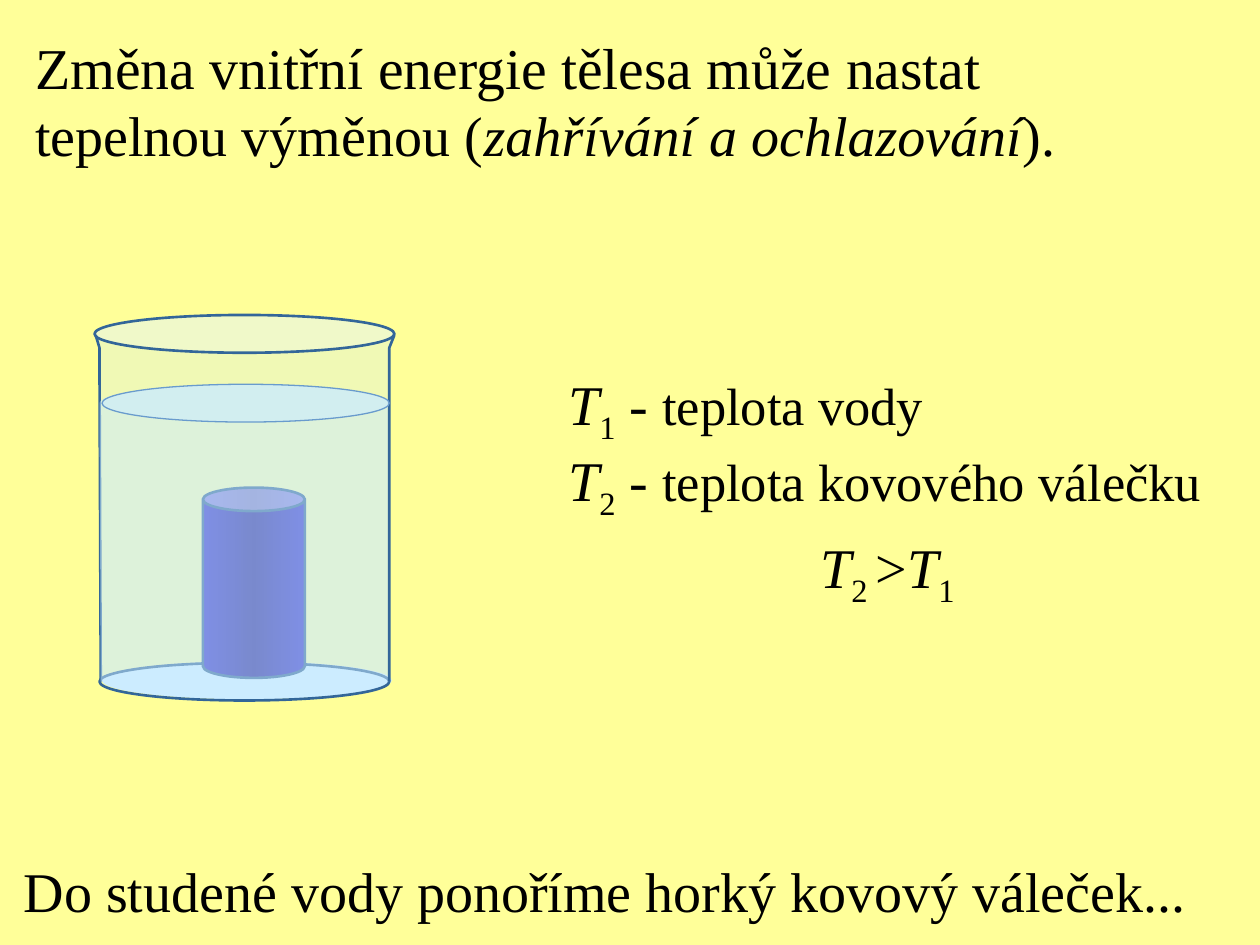
"""Builds a slide on heat exchange between water and a hot metal cylinder."""
from copy import deepcopy
from math import cos, pi, sin

from pptx import Presentation
from pptx.dml.color import RGBColor
from pptx.enum.shapes import MSO_SHAPE
from pptx.enum.text import MSO_ANCHOR, PP_ALIGN
from pptx.oxml.ns import qn
from pptx.oxml.xmlchemy import OxmlElement
from pptx.util import Inches, Pt

BACKGROUND = RGBColor(0xFF, 0xFF, 0x99)
BLACK = RGBColor(0, 0, 0)
WATER = RGBColor(0xCC, 0xEC, 0xFF)
RIM = RGBColor(0xF3, 0xFA, 0xFF)
OUTLINE = RGBColor(0x33, 0x66, 0x99)
SURFACE_LINE = RGBColor(0x69, 0x9B, 0xCD)
METAL = RGBColor(0x33, 0x33, 0xCC)
METAL_DARK = RGBColor(0x27, 0x27, 0x9C)
FONT = "Times New Roman"


def write_runs(paragraph, runs):
    paragraph.alignment = PP_ALIGN.LEFT
    for text, size, style in runs:
        run = paragraph.add_run()
        run.text = text
        run.font.name = FONT
        run.font.size = Pt(size)
        run.font.color.rgb = BLACK
        run.font.italic = style == "italic"
        if style == "sub":
            run.font._element.set("baseline", "-25000")


def upper_arc(center_x, center_y, radius_x, radius_y):
    angles = [pi * step / 24 for step in range(25)]
    return [(center_x - radius_x * cos(a), center_y - radius_y * sin(a)) for a in angles]


prs = Presentation()
prs.slide_width, prs.slide_height = Inches(10), Inches(7.5)
slide = prs.slides.add_slide(prs.slide_layouts[5])
slide.background.fill.solid()
slide.background.fill.fore_color.rgb = BACKGROUND

caption = slide.shapes.add_textbox(Inches(0.09), Inches(6.75), Inches(9.63), Inches(0.64)).text_frame
caption.word_wrap = True
write_runs(caption.paragraphs[0], [("Do studené vody ponoříme horký kovový váleček...", 32, "")])

legend = slide.shapes.add_textbox(Inches(4.51), Inches(2.88), Inches(5.3), Inches(1.82)).text_frame
legend.word_wrap = True
legend.margin_left = legend.margin_right = 0
legend_lines = [
    [("T", 32, "italic"), ("1", 32, "sub"), (" - ", 32, ""), ("teplota vody", 30, "")],
    [("T", 32, "italic"), ("2", 32, "sub"), (" - ", 32, ""), ("teplota kovového válečku", 30, "")],
    [("T", 32, "italic"), ("2 ", 32, "sub"), (">", 32, ""), ("T", 32, "italic"), ("1", 32, "sub")],
]
for index, runs in enumerate(legend_lines):
    line = legend.add_paragraph() if index else legend.paragraphs[0]
    write_runs(line, runs)
legend.paragraphs[1].space_after = Pt(6)
legend.paragraphs[2]._p.get_or_add_pPr().set("marL", str(Inches(2)))

title = slide.shapes.title
title.left, title.top, title.width, title.height = Inches(0.2), Inches(0.2), Inches(8.64), Inches(1.19)
heading = title.text_frame
heading.word_wrap = True
heading.vertical_anchor = MSO_ANCHOR.TOP
heading.margin_left = heading.margin_right = Inches(0.08)
write_runs(heading.paragraphs[0], [
    ("Změna vnitřní energie tělesa může nastat", 33, ""),
    (" tepelnou výměnou (", 32, ""),
    ("zahřívání a ochlazování", 32, "italic"),
    (").", 32, ""),
])

glass = upper_arc(1.94, 2.66, 1.19, 0.15) + [
    (3.09, 2.76), (3.09, 5.39), (0.79, 5.39), (0.79, 2.76)]
water = upper_arc(1.94, 3.2, 1.15, 0.15) + [(3.09, 5.41), (0.8, 5.41)]
left_wall = [(0.76, 2.66), (0.79, 2.76), (0.79, 2.85), (0.8, 5.41)]
right_wall = [(3.13, 2.66), (3.09, 2.76), (3.09, 5.41)]

beaker_parts = [
    (None, glass, WATER, 28, None, 0),
    (MSO_SHAPE.OVAL, (0.75, 2.5, 2.38, 0.3), RIM, 28, OUTLINE, 1.5),
    (MSO_SHAPE.OVAL, (0.81, 5.25, 2.3, 0.3), WATER, 100, None, 0),
    (MSO_SHAPE.OVAL, (0.79, 5.26, 2.3, 0.3), WATER, 15, OUTLINE, 1.5),
    (None, left_wall, None, 0, OUTLINE, 1.5),
    (MSO_SHAPE.CAN, (1.61, 3.87, 0.81, 1.51), METAL, 100, OUTLINE, 1.5),
    (None, water, WATER, 50, None, 0),
    (None, right_wall, None, 0, OUTLINE, 1.5),
    (MSO_SHAPE.OVAL, (0.81, 3.05, 2.28, 0.3), WATER, 60, SURFACE_LINE, 0.75),
]
for preset, geometry, color, opacity, edge, edge_width in beaker_parts:
    if preset is None:
        points = [(Inches(x), Inches(y)) for x, y in geometry]
        builder = slide.shapes.build_freeform(*points[0])
        builder.add_line_segments(points[1:], close=color is not None)
        part = builder.convert_to_shape()
    else:
        part = slide.shapes.add_shape(preset, *[Inches(length) for length in geometry])
    part.shadow.inherit = False

    if color is None:
        part.fill.background()
    elif preset == MSO_SHAPE.CAN:
        part.adjustments[0] = 0.23
        part.fill.gradient()
        part.fill.gradient_angle = 0
        stop_list = part._element.spPr.find(qn("a:gradFill")).find(qn("a:gsLst"))
        stop_list.append(deepcopy(stop_list[0]))
        for stop, position, shade in zip(
                part.fill.gradient_stops, (0, 0.5, 1), (METAL, METAL_DARK, METAL)):
            stop.position = position
            stop.color.rgb = shade
    else:
        part.fill.solid()
        part.fill.fore_color.rgb = color
        if opacity < 100:
            alpha = OxmlElement("a:alpha")
            alpha.set("val", str(opacity * 1000))
            part._element.spPr.find(qn("a:solidFill"))[0].append(alpha)

    if edge is None:
        part.line.fill.background()
    else:
        part.line.color.rgb = edge
        part.line.width = Pt(edge_width)

prs.save("out.pptx")
